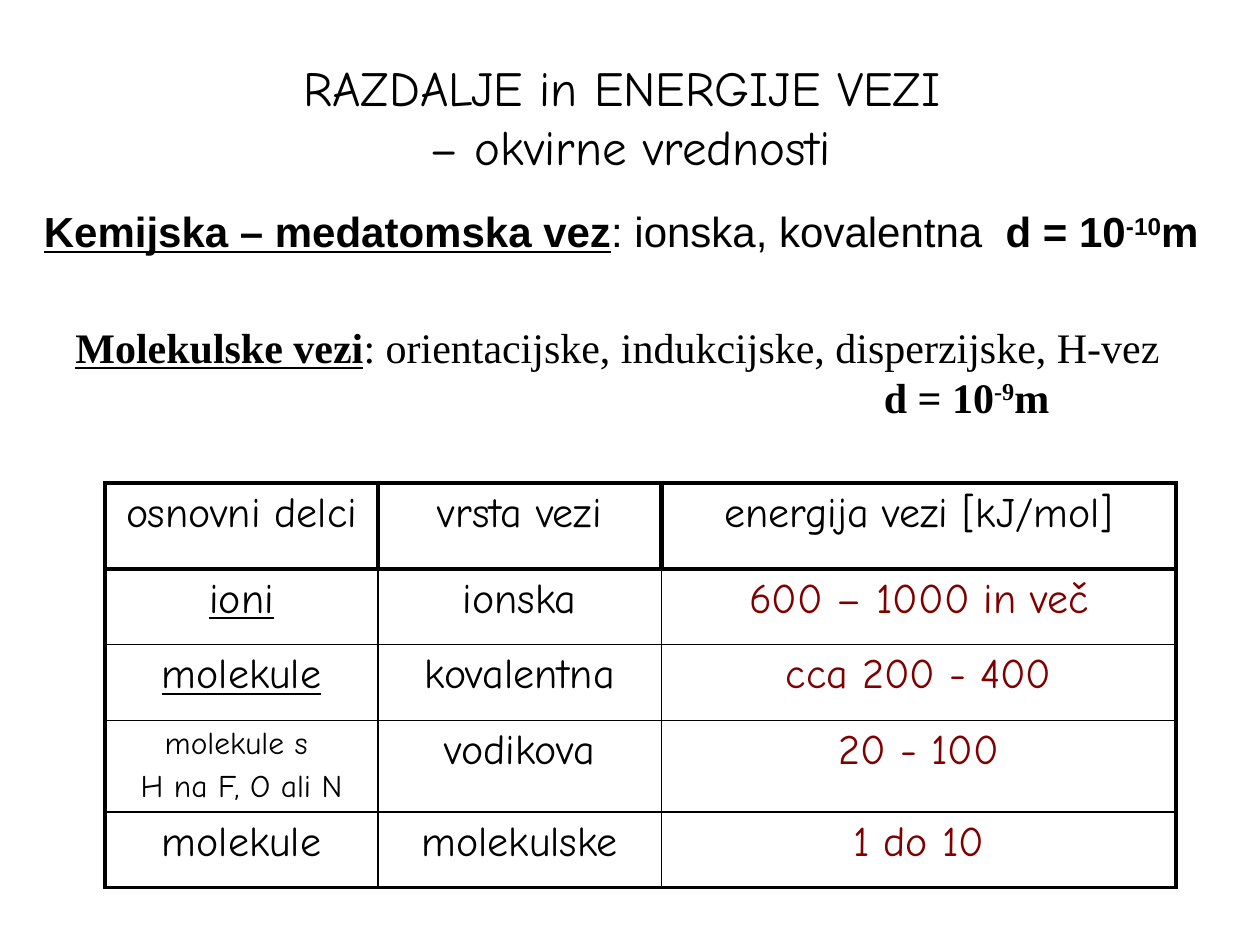
from typing import NamedTuple

from lxml.etree import SubElement
from pptx import Presentation
from pptx.dml.color import RGBColor
from pptx.enum.text import MSO_ANCHOR as Anchor, MSO_AUTO_SIZE as Fit, PP_ALIGN as Align
from pptx.oxml.ns import qn
from pptx.util import Inches, Pt

BLACK = RGBColor(0, 0, 0)
MAROON = RGBColor(0x80, 0, 0)
HAND = "Comic Neue"
THIN, EDGE, THICK = 1, 2.25, 3
COLS = (26, 27, 49)
ROWS = (8.2, 7.2, 7.2, 6.7, 7.2)


def unit(n: float) -> int:
    """Grid steps, twelve to the inch."""
    return Inches(n / 12)


class Box(NamedTuple):
    left: float
    top: float
    width: float
    height: float

    def place(self) -> tuple:
        return tuple(unit(n) for n in self)


class Part(NamedTuple):
    text: str
    bold: bool = False
    line: bool = False
    base: int = 0


class Note(NamedTuple):
    box: Box
    font: str
    lines: tuple
    indents: tuple


class Entry(NamedTuple):
    text: str
    size: int = 24
    color: RGBColor = BLACK
    line: bool = False


def style(para, name: str, size: int, color: RGBColor = BLACK) -> None:
    font = para.font
    font.name, font.size, font.color.rgb = name, Pt(size), color


def add_note(slide, note: Note) -> None:
    frame = slide.shapes.add_textbox(*note.box.place()).text_frame
    frame.word_wrap = True
    frame.auto_size = Fit.SHAPE_TO_FIT_TEXT
    for i, (parts, indent) in enumerate(zip(note.lines, note.indents)):
        para = frame.add_paragraph() if i else frame.paragraphs[0]
        para._p.get_or_add_pPr().set("marL", str(unit(indent)))
        style(para, note.font, 24)
        for part in parts:
            run = para.add_run()
            run.text = part.text
            run.font.bold, run.font.underline = part.bold, part.line
            if part.base:
                run.font._element.set("baseline", str(part.base * 1000))


def add_borders(cell, widths: dict) -> None:
    props = cell._tc.get_or_add_tcPr()
    for i, (side, width) in enumerate(widths.items()):
        line = SubElement(props, qn(f"a:ln{side}"), w=str(Pt(width)))
        fill = SubElement(line, qn("a:solidFill"))
        SubElement(fill, qn("a:srgbClr"), val=str(BLACK))
        props.insert(i, line)


def fill_cell(cell, entry: Entry) -> None:
    cell.fill.background()
    cell.text_frame.text = entry.text
    for para in cell.text_frame.paragraphs:
        para.alignment = Align.CENTER
        para.space_before = Pt(entry.size * 0.2)
        style(para, HAND, entry.size, entry.color)
        para.font.underline = entry.line
        for run in para.runs:
            run.font.underline = entry.line


def add_grid(slide, box: Box, rows: list) -> None:
    table = slide.shapes.add_table(len(ROWS), len(COLS), *box.place()).table
    table.first_row = table.horz_banding = False
    for col, width in zip(table.columns, COLS):
        col.width = unit(width)
    for row, height in zip(table.rows, ROWS):
        row.height = unit(height)
    for r, row in enumerate(rows):
        inner = THIN if r else THICK
        for c, entry in enumerate(row):
            cell = table.cell(r, c)
            fill_cell(cell, entry)
            add_borders(cell, {
                "L": inner if c else EDGE,
                "R": inner if c < len(COLS) - 1 else EDGE,
                "T": THIN if r > 1 else THICK,
                "B": EDGE if r == len(ROWS) - 1 else inner,
            })


def add_title(slide, box: Box, text: str) -> None:
    title = slide.shapes.title
    title.left, title.top, title.width, title.height = box.place()
    frame = title.text_frame
    frame.text = text
    frame.auto_size = Fit.NONE
    frame.vertical_anchor = Anchor.MIDDLE
    para = frame.paragraphs[0]
    para.alignment = Align.CENTER
    style(para, HAND, 28)


def dist(power: str) -> tuple:
    return Part("d = 10", True), Part(power, True, base=30), Part("m", True)


NOTES = [
    Note(Box(6, 30, 110, 10.8), "Times New Roman", (
        (Part("Molekulske vezi", True, True),
         Part(": orientacijske, indukcijske, disperzijske, H-vez")),
        dist("-9")), (0, 77)),
    Note(Box(3, 19, 115, 6), "Arial", (
        (Part("Kemijska – medatomska vez", True, True),
         Part(": ionska, kovalentna  "), *dist("-10")),), (0,)),
]
BONDS = [
    (Entry("osnovni delci"), Entry("vrsta vezi"), Entry("energija vezi [kJ/mol]")),
    (Entry("ioni", line=True), Entry("ionska"),
     Entry("600 – 1000 in več", color=MAROON)),
    (Entry("molekule", line=True), Entry("kovalentna"),
     Entry("cca 200 - 400", color=MAROON)),
    (Entry("molekule s \nH na F, O ali N", 18), Entry("vodikova"),
     Entry("20 - 100", color=MAROON)),
    (Entry("molekule"), Entry("molekulske"), Entry("1 do 10", color=MAROON)),
]


def main() -> None:
    deck = Presentation()
    deck.slide_width, deck.slide_height = unit(120), unit(90)
    slide = deck.slides.add_slide(deck.slide_layouts[5])
    add_grid(slide, Box(10, 46, sum(COLS), sum(ROWS)), BONDS)
    add_title(slide, Box(9, 6, 102, 10.2),
              "RAZDALJE in ENERGIJE VEZI \v– okvirne vrednosti")
    for note in NOTES:
        add_note(slide, note)
    deck.save("out.pptx")


if __name__ == "__main__":
    main()
